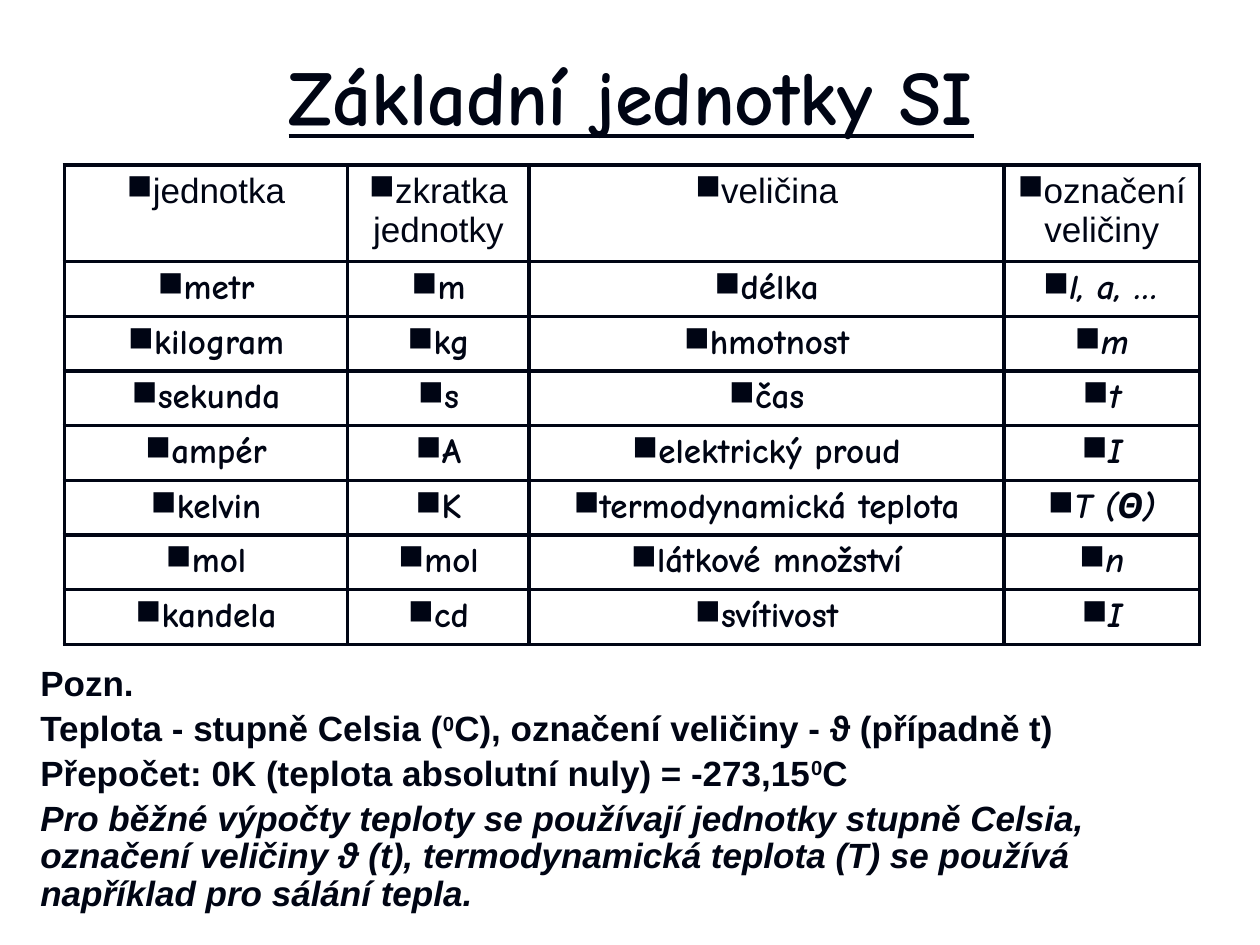
from dataclasses import dataclass

from lxml.etree import SubElement
from pptx import Presentation
from pptx.dml.color import RGBColor
from pptx.enum.text import MSO_ANCHOR, PP_ALIGN
from pptx.oxml.ns import qn
from pptx.util import Inches, Pt


@dataclass(frozen=True)
class Theme:
    ink: RGBColor = RGBColor(0x00, 0x05, 0x14)
    paper: RGBColor = RGBColor(0xFF, 0xFF, 0xFF)
    plain: str = "Arial"
    hand: str = "Comic Neue"
    title: Pt = Pt(44)
    body: Pt = Pt(20)
    space: Pt = Pt(4)
    border: Pt = Pt(2.25)


@dataclass(frozen=True)
class Unit:
    name: str
    abbreviation: str
    quantity: str
    symbol: str


@dataclass(frozen=True)
class Note:
    segments: tuple[str, ...]
    italic: bool = False


THEME = Theme()
HEADINGS = ("jednotka", "zkratka jednotky", "veličina", "označení veličiny")
UNITS = (
    Unit("metr", "m", "délka", "l, a, …"),
    Unit("kilogram", "kg", "hmotnost", "m"),
    Unit("sekunda", "s", "čas", "t"),
    Unit("ampér", "A", "elektrický proud", "I"),
    Unit("kelvin", "K", "termodynamická teplota", "T (Θ)"),
    Unit("mol", "mol", "látkové množství", "n"),
    Unit("kandela", "cd", "svítivost", "I"),
)
COLUMN_WIDTHS = (2.25, 1.44, 3.77, 1.55)
HEADER_HEIGHT, ROW_HEIGHT = 0.72, 0.42
NOTES = (
    Note(("Pozn.",)),
    Note(("Teplota - stupně Celsia (", "0", "C), označení veličiny - ϑ (případně t)")),
    Note(("Přepočet: 0K (teplota absolutní nuly) = -273,15", "0", "C")),
    Note(("Pro běžné výpočty teploty se používají jednotky stupně Celsia, "
          "označení veličiny ϑ (t), termodynamická teplota (T) se používá "
          "například pro sálání tepla.",), italic=True),
)


def set_font(p, name: str, size: Pt, bold: bool = False, italic: bool = False) -> None:
    p.font.name, p.font.size = name, size
    p.font.bold, p.font.italic = bold, italic
    p.font.color.rgb = THEME.ink


def add_bullet(p) -> None:
    props = p._p.get_or_add_pPr()
    props.set("marL", "0")
    props.set("indent", "0")
    bullet = props.makeelement(qn("a:buChar"), {"char": "■"})
    props.insert_element_before(bullet, "a:tabLst", "a:defRPr", "a:extLst")


def add_borders(cell) -> None:
    props = cell._tc.get_or_add_tcPr()
    for i, side in enumerate(("lnL", "lnR", "lnT", "lnB")):
        line = props.makeelement(qn(f"a:{side}"), {"w": str(int(THEME.border))})
        fill = SubElement(line, qn("a:solidFill"))
        SubElement(fill, qn("a:srgbClr"), val=str(THEME.ink))
        props.insert(i, line)


def fill_cell(cell, text: str, header: bool, italic: bool) -> None:
    cell.fill.background()
    add_borders(cell)
    p = cell.text_frame.paragraphs[0]
    p.text = text
    p.alignment = PP_ALIGN.CENTER
    p.space_before = THEME.space
    set_font(p, THEME.plain if header else THEME.hand, THEME.body, not header, italic)
    add_bullet(p)


def add_title(s, text: str) -> None:
    tf = s.shapes.add_textbox(Inches(0.51), Inches(0.28), Inches(9), Inches(0.95)).text_frame
    tf.word_wrap = True
    tf.vertical_anchor = MSO_ANCHOR.MIDDLE
    p = tf.paragraphs[0]
    p.text = text
    p.alignment = PP_ALIGN.CENTER
    set_font(p, THEME.hand, THEME.title, bold=True)
    p.font.underline = True


def add_units_table(s) -> None:
    rows = [HEADINGS] + [(u.name, u.abbreviation, u.quantity, u.symbol) for u in UNITS]
    height = HEADER_HEIGHT + ROW_HEIGHT * len(UNITS)
    table = s.shapes.add_table(len(rows), len(HEADINGS), Inches(0.51), Inches(1.31),
                               Inches(sum(COLUMN_WIDTHS)), Inches(height)).table
    table.horz_banding = False
    for column, width in zip(table.columns, COLUMN_WIDTHS):
        column.width = Inches(width)
    for i, texts in enumerate(rows):
        header = i == 0
        table.rows[i].height = Inches(HEADER_HEIGHT if header else ROW_HEIGHT)
        for j, text in enumerate(texts):
            symbol = j == len(texts) - 1
            fill_cell(table.cell(i, j), text, header, symbol and not header)


def add_notes(s) -> None:
    tf = s.shapes.add_textbox(Inches(0.28), Inches(5.25), Inches(9.53), Inches(2.1)).text_frame
    tf.word_wrap = True
    tf.margin_left = tf.margin_right = tf.margin_top = tf.margin_bottom = Inches(0.04)
    for i, note in enumerate(NOTES):
        p = tf.add_paragraph() if i else tf.paragraphs[0]
        p.line_spacing = 0.9
        p.space_before = THEME.space
        set_font(p, THEME.plain, THEME.body, bold=True, italic=note.italic)
        for j, segment in enumerate(note.segments):
            r = p.add_run()
            r.text = segment
            if j == 1:
                r.font._element.set("baseline", "30000")


def main() -> None:
    prs = Presentation()
    prs.slide_width, prs.slide_height = Inches(10), Inches(7.5)
    s = prs.slides.add_slide(prs.slide_layouts[6])
    s.background.fill.solid()
    s.background.fill.fore_color.rgb = THEME.paper
    add_title(s, "Základní jednotky SI")
    add_units_table(s)
    add_notes(s)
    prs.save("out.pptx")


if __name__ == "__main__":
    main()
